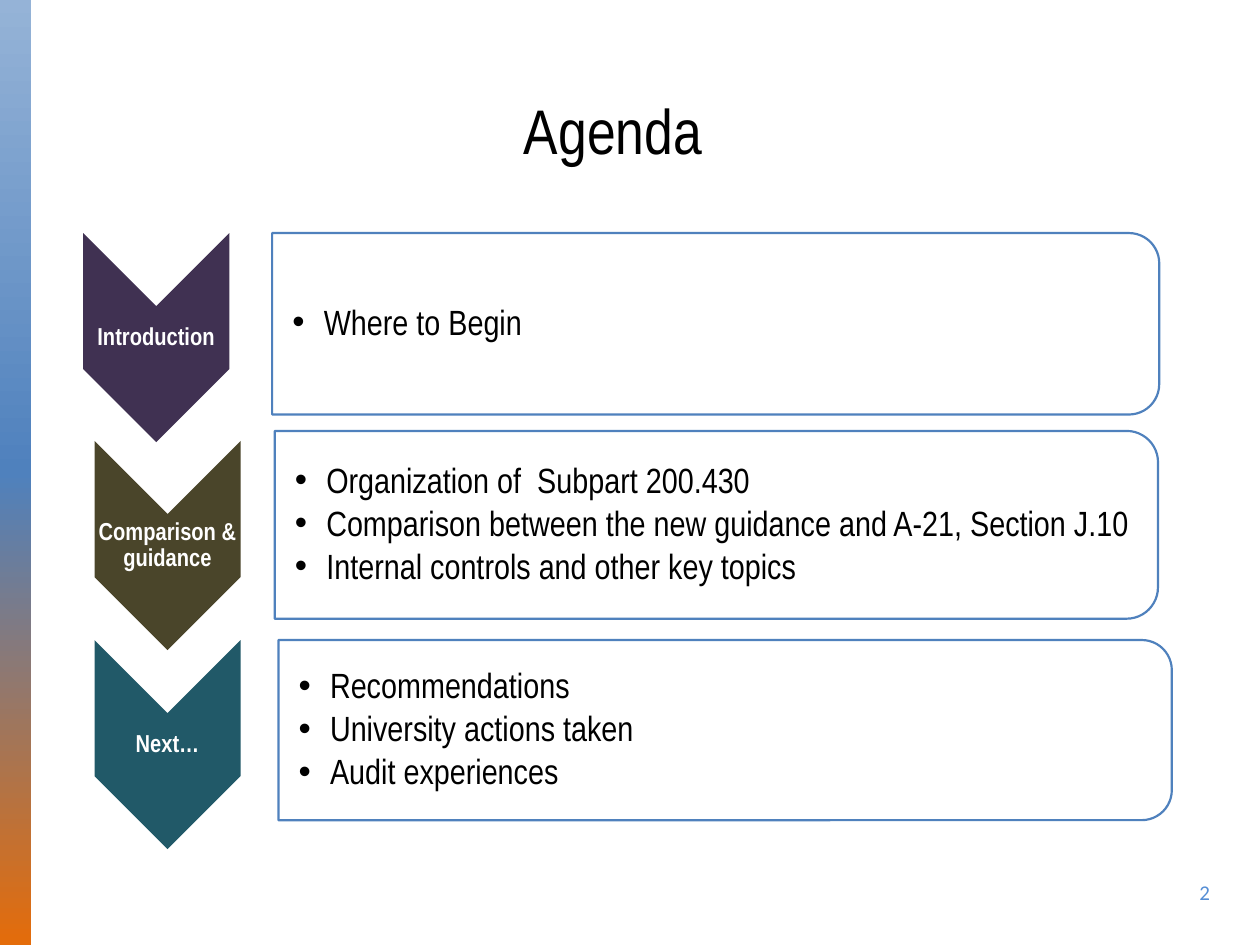
from copy import deepcopy
from dataclasses import dataclass

from lxml import etree
from pptx import Presentation
from pptx.dml.color import RGBColor
from pptx.enum.shapes import MSO_SHAPE
from pptx.enum.text import MSO_ANCHOR, MSO_AUTO_SIZE, PP_ALIGN
from pptx.oxml.ns import qn
from pptx.util import Inches, Pt

CHEVRON, ROUNDED_TOP, RECTANGLE = (
    MSO_SHAPE.CHEVRON, MSO_SHAPE.ROUND_2_SAME_RECTANGLE, MSO_SHAPE.RECTANGLE)
LEFT, CENTER = PP_ALIGN.LEFT, PP_ALIGN.CENTER
MIDDLE, NO_AUTOFIT = MSO_ANCHOR.MIDDLE, MSO_AUTO_SIZE.NONE
COMPARISON_LAYOUT = 4


@dataclass(frozen=True)
class Theme:
    font: str = "Arial Narrow"
    number_font: str = "Calibri"
    black: str = "000000"
    white: str = "FFFFFF"
    outline: str = "4F81BD"
    number: str = "558ED5"
    stripe: tuple = ("95B3D7", "4F81BD", "E46C0A")
    title_size: int = 36
    list_size: int = 20
    label_size: int = 14
    number_size: int = 12


THEME = Theme()
CHEVRON_WIDTH, CHEVRON_HEIGHT = 1.16, 1.66
CHEVRON_POINT = CHEVRON_WIDTH / 2
LABEL_HEIGHT = 0.5
LIST_MARGIN = 0.07

# Label, chevron colour, chevron left and top, panel left, top, width, height, topics
SECTIONS = [
    ("Introduction", "403152", (0.66, 1.85), (2.16, 1.85, 7.04, 1.44),
     ["Where to Begin"]),
    ("Comparison & guidance", "4A452A", (0.75, 3.5), (2.18, 3.42, 7.01, 1.49),
     ["Organization of  Subpart 200.430",
      "Comparison between the new guidance and A-21, Section J.10",
      "Internal controls and other key topics"]),
    ("Next…", "215968", (0.75, 5.08), (2.21, 5.08, 7.09, 1.43),
     ["Recommendations", "University actions taken", "Audit experiences"]),
]


def place(box, left, top, width, height):
    box.left, box.top = Inches(left), Inches(top)
    box.width, box.height = Inches(width), Inches(height)


def add_bullet(para):
    properties = para._p.get_or_add_pPr()
    properties.set("marL", str(Inches(0.25)))
    properties.set("indent", str(-Inches(0.25)))
    etree.SubElement(properties, qn("a:buFont"), typeface="Arial")
    etree.SubElement(properties, qn("a:buChar"), char="•")


def write(box, lines, *, size, color, font=THEME.font, bold=False, align=LEFT,
          insets=(0.1, 0.05, 0.1, 0.05), spacing=1.0, after=0, bullets=False):
    """Fill a box with one formatted paragraph per line."""
    frame = box.text_frame
    frame.word_wrap = True
    frame.auto_size = NO_AUTOFIT
    frame.vertical_anchor = MIDDLE
    (frame.margin_left, frame.margin_top,
     frame.margin_right, frame.margin_bottom) = map(Inches, insets)
    for index, line in enumerate(lines):
        para = frame.add_paragraph() if index else frame.paragraphs[0]
        para.alignment = align
        para.line_spacing = spacing
        para.space_before, para.space_after = Pt(0), Pt(after)
        if bullets:
            para.level = 1
            add_bullet(para)
        span = para.add_run()
        span.text = line
        span.font.name, span.font.size, span.font.bold = font, Pt(size), bold
        span.font.color.rgb = RGBColor.from_string(color)


def add_turned_shape(page, kind, left, top, width, height, fill):
    """Add a shape turned by 90 degrees; the lengths are those seen on the page."""
    shift = (width - height) / 2
    shape = page.shapes.add_shape(
        kind, Inches(left + shift), Inches(top - shift), Inches(height), Inches(width))
    shape.rotation = 90
    shape.shadow.inherit = False
    shape.fill.solid()
    shape.fill.fore_color.rgb = RGBColor.from_string(fill)
    shape.line.fill.background()
    return shape


def add_stripe(page):
    stripe = page.shapes.add_shape(RECTANGLE, 0, 0, Inches(0.25), Inches(7.5))
    stripe.shadow.inherit = False
    stripe.line.fill.background()
    stripe.fill.gradient()
    stripe.fill.gradient_angle = 270
    stop_list = stripe._element.spPr.find(".//" + qn("a:gsLst"))
    stop_list.insert(1, deepcopy(stop_list[0]))
    for stop, color, position in zip(stripe.fill.gradient_stops, THEME.stripe, (0, 0.5, 1)):
        stop.color.rgb = RGBColor.from_string(color)
        stop.position = position


def add_chevron(page, label, color, left, top):
    add_turned_shape(page, CHEVRON, left, top, CHEVRON_WIDTH, CHEVRON_HEIGHT, color)
    box = page.shapes.add_textbox(
        Inches(left), Inches(top + CHEVRON_POINT), Inches(CHEVRON_WIDTH), Inches(LABEL_HEIGHT))
    write(box, [label], size=THEME.label_size, color=THEME.white, bold=True,
          align=CENTER, insets=(0.01,) * 4, spacing=0.9, after=5)


def add_panel(page, body, topics, left, top, width, height):
    panel = add_turned_shape(page, ROUNDED_TOP, left, top, width, height, THEME.white)
    color = panel._element.spPr.find(qn("a:solidFill"))[0]
    etree.SubElement(color, qn("a:alpha"), val="90000")
    panel.line.color.rgb = RGBColor.from_string(THEME.outline)
    panel.line.width = Pt(1.25)

    # Bring the list in front of its panel
    panel._element.addnext(body._element)
    place(body, left, top + LIST_MARGIN, width - LIST_MARGIN, height - 2 * LIST_MARGIN)
    write(body, topics, size=THEME.list_size, color=THEME.black, bullets=True,
          insets=(0.16, 0.01, 0.01, 0.01), spacing=0.9, after=3)


def main():
    deck = Presentation()
    deck.slide_width, deck.slide_height = Inches(10), Inches(7.5)
    page = deck.slides.add_slide(deck.slide_layouts[COMPARISON_LAYOUT])
    title, *bodies = page.placeholders
    add_stripe(page)

    # Title
    place(title, 0.28, 0.32, 9.17, 1.42)
    write(title, ["Agenda"], size=THEME.title_size, color=THEME.black, align=CENTER)

    # Agenda sections
    for body, (label, color, corner, panel, topics) in zip(bodies, SECTIONS):
        add_chevron(page, label, color, *corner)
        add_panel(page, body, topics, *panel)
    for spare in bodies[len(SECTIONS):]:
        spare._element.getparent().remove(spare._element)

    # Page number
    number = page.shapes.add_textbox(Inches(9.42), Inches(6.88), Inches(0.42), Inches(0.4))
    write(number, ["2"], size=THEME.number_size, color=THEME.number, font=THEME.number_font)

    deck.save("out.pptx")


if __name__ == "__main__":
    main()
